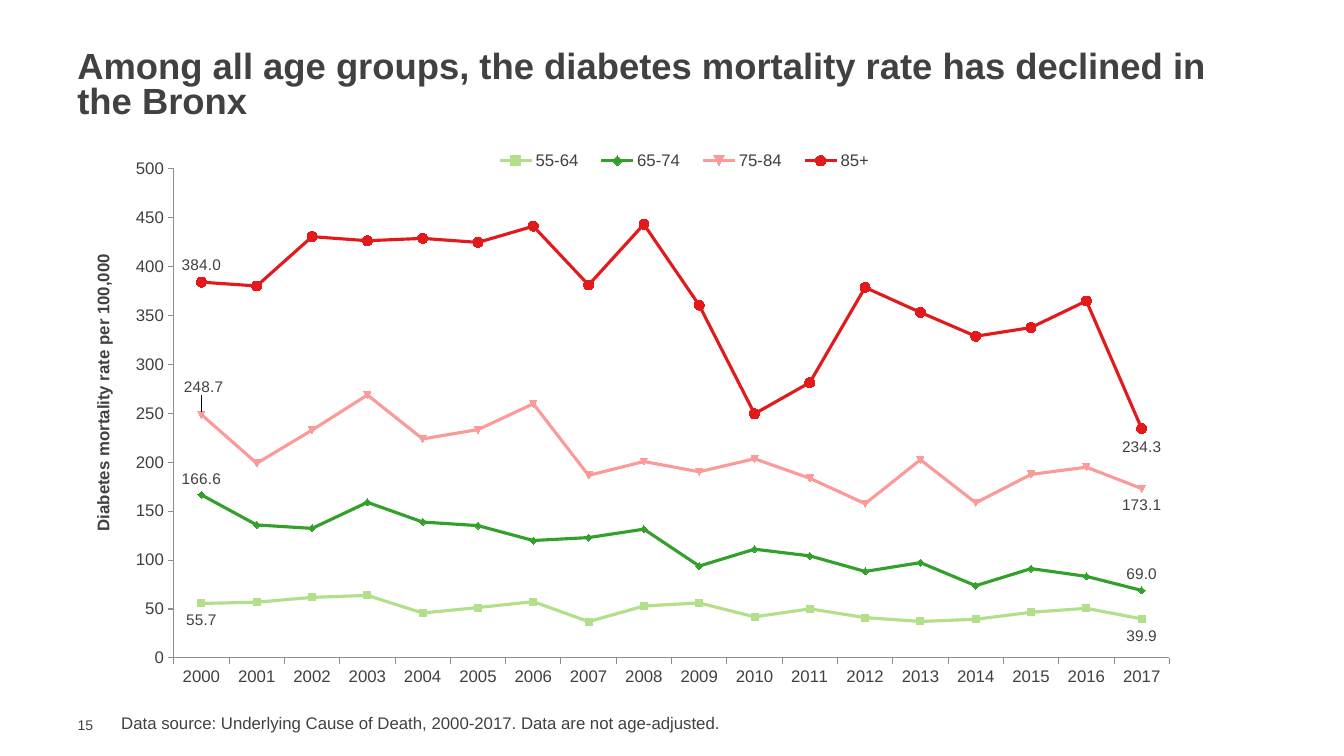
from lxml import etree
from pptx import Presentation
from pptx.chart.data import CategoryChartData
from pptx.dml.color import RGBColor
from pptx.enum.chart import XL_CHART_TYPE, XL_LABEL_POSITION as LABEL_AT
from pptx.enum.chart import XL_LEGEND_POSITION, XL_MARKER_STYLE, XL_TICK_MARK
from pptx.enum.text import MSO_ANCHOR, PP_ALIGN
from pptx.oxml import parse_xml
from pptx.oxml.ns import nsdecls, qn
from pptx.util import Pt

PX = 9525  # 96 px to the inch
INK, AXIS_GREY = "414042", "8C8C8C"
FONT = "Arial"
ABOVE, BELOW = LABEL_AT.ABOVE, LABEL_AT.BELOW

YEARS = [str(year) for year in range(2000, 2018)]
# age group, colour, first and last label position, yearly rates
AGE_GROUPS = [
    ("55-64", "B2DF8A", BELOW, BELOW,
     [55.7, 57, 61.9, 63.9, 45.9, 51.5, 57.5, 37.1, 53.1,
      56.2, 42, 50.2, 41.2, 37.3, 39.5, 46.7, 50.7, 39.9]),
    ("65-74", "33A02C", ABOVE, ABOVE,
     [166.6, 135.9, 132.4, 159, 138.9, 135.2, 120, 123, 131.6,
      93.9, 111.1, 104.3, 88.4, 97.4, 73.8, 91.3, 83.4, 69]),
    ("75-84", "FB9A99", ABOVE, BELOW,
     [248.7, 198.9, 232.8, 268.7, 223.8, 233.3, 259.7, 186.5, 200.7,
      190.2, 203.5, 183.6, 157.6, 202.5, 158.5, 187.5, 194.9, 173.1]),
    ("85+", "E31A1C", ABOVE, BELOW,
     [384, 380.1, 430.5, 426.3, 428.7, 424.6, 441.1, 381.1, 443.1,
      360.4, 249.5, 281.4, 378.6, 353.1, 328.7, 337.6, 364.8, 234.3]),
]


def px(*lengths):
    return [length * PX for length in lengths]


def rgb(colour):
    return RGBColor.from_string(colour)


def set_font(font, size, bold=False, colour=INK):
    font.name, font.size, font.bold = FONT, Pt(size), bold
    font.color.rgb = rgb(colour)


def write(shape, text, size, bold=False, spacing=None, anchor=MSO_ANCHOR.TOP, insets=None):
    frame = shape.text_frame
    frame.word_wrap, frame.vertical_anchor = True, anchor
    if insets:
        (frame.margin_left, frame.margin_top,
         frame.margin_right, frame.margin_bottom) = px(*insets)
    para = frame.paragraphs[0]
    para.alignment, para.line_spacing = PP_ALIGN.LEFT, spacing
    span = para.add_run()
    span.text = text
    set_font(span.font, size, bold)


def manual_layout(edge=True, inner=False, **fractions):
    """Chart part layout; edge fractions run from the chart's corner, others are offsets."""
    layout = parse_xml(f"<c:layout {nsdecls('c')}><c:manualLayout/></c:layout>")
    rules = {"layoutTarget": "inner"} if inner else {}
    if edge:
        rules.update(xMode="edge", yMode="edge")
    for tag, value in {**rules, **fractions}.items():
        etree.SubElement(layout[0], qn(f"c:{tag}")).set("val", str(value))
    return layout


def place(parent, layout, after=None):
    """Put a layout in a chart part, replacing any, after the named child or first."""
    for old in parent.findall(qn("c:layout")):
        parent.remove(old)
    leader = parent.find(qn(after)) if after else None
    parent.insert(0 if leader is None else parent.index(leader) + 1, layout)


def style_axis(axis):
    axis.has_major_gridlines = False
    axis.major_tick_mark, axis.minor_tick_mark = XL_TICK_MARK.OUTSIDE, XL_TICK_MARK.NONE
    axis.format.line.color.rgb = rgb(AXIS_GREY)
    axis.format.line.width = Pt(0.75)
    set_font(axis.tick_labels.font, 12)


def style_series(series, colour, label_positions):
    series.smooth = False
    series.format.line.color.rgb = rgb(colour)
    series.format.line.width = Pt(2.25)
    marker = series.marker.format
    marker.fill.solid()
    marker.fill.fore_color.rgb = rgb(colour)
    marker.line.color.rgb = rgb(colour)
    series.data_labels.show_value = False
    for index, position in label_positions.items():
        label = series.points[index].data_label
        set_font(label.font, 11)
        label.position = position


def lift_first_label(series):
    """Raise the first label off its point and tie it back with a leader line."""
    labels = series._element.find(qn("c:dLbls"))
    place(labels.find(qn("c:dLbl")), manual_layout(edge=False, x=0.002, y=-0.02), "c:idx")
    labels.append(parse_xml(
        f"<c:extLst {nsdecls('c')}><c:ext uri='{{CE6537A1-D6FC-4f65-9D91-7224C49458BB}}'"
        " xmlns:c15='http://schemas.microsoft.com/office/drawing/2012/chart'>"
        "<c15:showLeaderLines val='1'/></c:ext></c:extLst>"))


def add_rate_chart(page, box):
    data = CategoryChartData(number_format="0.0")
    data.categories = YEARS
    for name, _, _, _, rates in AGE_GROUPS:
        data.add_series(name, rates)
    chart = page.shapes.add_chart(XL_CHART_TYPE.LINE_MARKERS, *px(*box), data).chart
    chart.has_title = False
    set_font(chart.font, 18)
    plot = chart.plots[0]
    plot.vary_by_categories = False
    place(chart._chartSpace.chart.plotArea,
          manual_layout(inner=True, x=0.095, y=0.044, w=0.887, h=0.868))

    chart.has_legend = True
    legend = chart.legend
    legend.position, legend.include_in_layout = XL_LEGEND_POSITION.TOP, False
    set_font(legend.font, 12)
    place(legend._element, manual_layout(x=0.37, y=0.01, w=0.36, h=0.04), "c:legendPos")

    years, rates = chart.category_axis, chart.value_axis
    style_axis(years)
    style_axis(rates)
    rates.minimum_scale, rates.maximum_scale, rates.major_unit = 0, 500, 50
    rates.tick_labels.number_format = "0"
    rates.tick_labels.number_format_is_linked = False
    title = rates.axis_title
    span = title.text_frame.paragraphs[0].add_run()
    span.text = "Diabetes mortality rate per 100,000"
    set_font(span.font, 12, bold=True)
    title.text_frame._txBody.bodyPr.set("rot", "-5400000")
    place(title._element, manual_layout(x=0.02, y=0.19), "c:tx")

    for series, (_, colour, first, last, _) in zip(plot.series, AGE_GROUPS):
        style_series(series, colour, {0: first, len(YEARS) - 1: last})
    lift_first_label(plot.series[2])
    oldest = plot.series[3].marker
    oldest.style, oldest.size = XL_MARKER_STYLE.CIRCLE, 7


def add_title(page, box):
    title = page.shapes.title
    title.left, title.top, title.width, title.height = px(*box)
    write(title, "Among all age groups, the diabetes mortality rate has declined in the Bronx",
          26, bold=True, spacing=0.8, anchor=MSO_ANCHOR.MIDDLE)


def add_footer(page, box):
    left, top, width, height = box
    number = page.shapes.add_textbox(*px(left, top + 8, 41, 16))
    write(number, "15", 10, anchor=MSO_ANCHOR.MIDDLE, insets=(10, 0, 0, 0))
    source = page.shapes.add_textbox(*px(left + 42, top, width - 42, height))
    write(source, "Data source: Underlying Cause of Death, 2000-2017. Data are not age-adjusted.", 12)


def main():
    deck = Presentation()
    deck.slide_width, deck.slide_height = px(1280, 720)
    page = deck.slides.add_slide(deck.slide_layouts[5])
    add_title(page, (64, 44, 1152, 77))
    add_rate_chart(page, (64, 137, 1069, 537))
    add_footer(page, (64, 674, 974, 29))
    deck.save("out.pptx")


if __name__ == "__main__":
    main()
